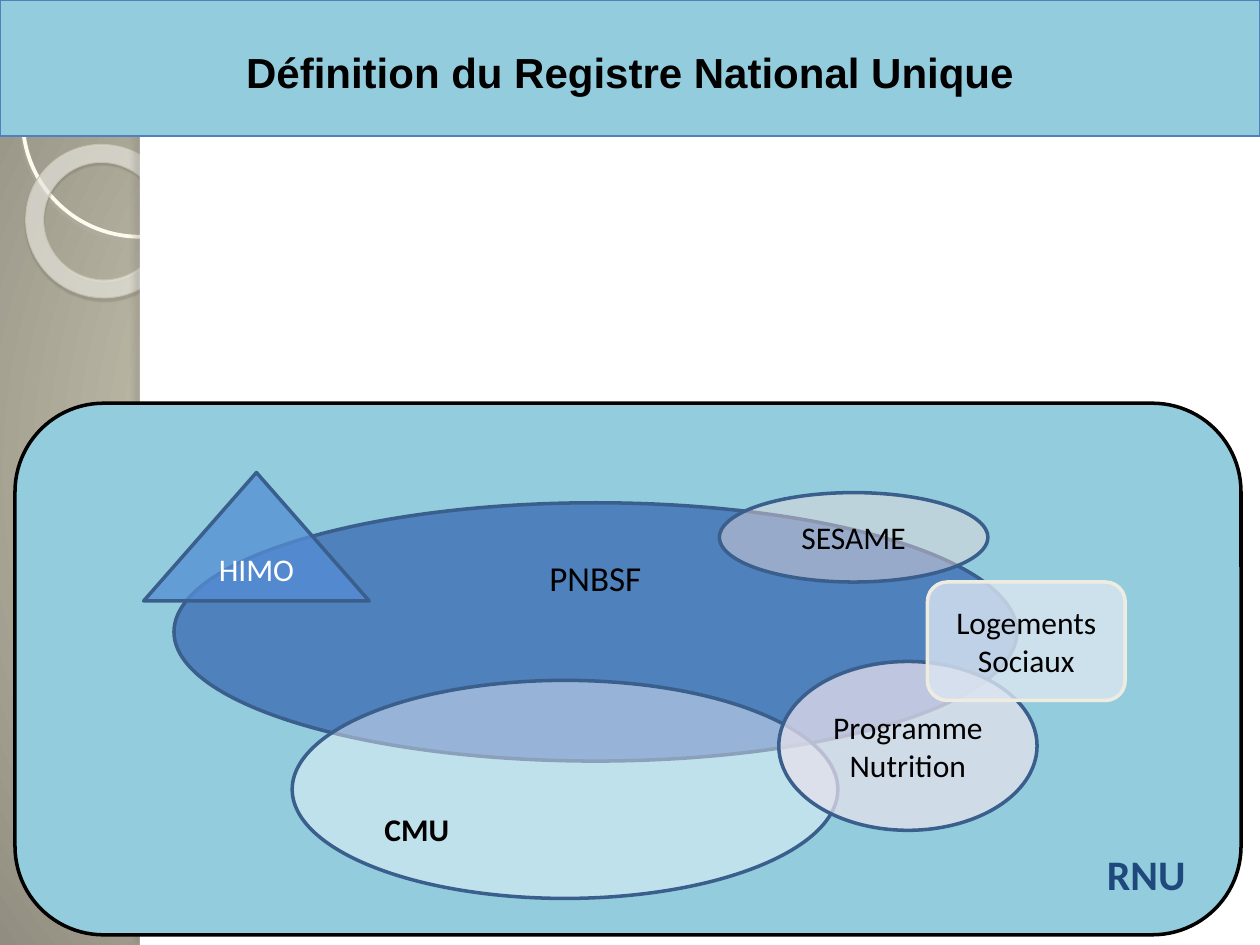
import dataclasses
import typing

import pptx
import pptx.dml.color
import pptx.enum.shapes
import pptx.enum.text
import pptx.oxml
import pptx.oxml.ns
import pptx.util

Pt = pptx.util.Pt
Kind = pptx.enum.shapes.MSO_SHAPE
Align = pptx.enum.text.PP_ALIGN
NS = 'xmlns:a="http://schemas.openxmlformats.org/drawingml/2006/main"'
BLUE, EDGE, BLACK = "93CDDD", "3A5F8C", "000000"


@dataclasses.dataclass
class Item:
    kind: typing.Any
    box: tuple
    fill: typing.Optional[str] = None
    alpha: int = 100
    line: typing.Optional[str] = EDGE
    width: float = 2
    text: str = ""
    font: dict = dataclasses.field(default_factory=dict)
    align: typing.Any = Align.CENTER
    inset: dict = dataclasses.field(default_factory=dict)
    turn: float = 0
    adjust: typing.Optional[float] = None
    shadow: typing.Optional[tuple] = None  # colour, alpha, blur, distance, angle


def tint(code: str) -> pptx.dml.color.RGBColor:
    return pptx.dml.color.RGBColor.from_string(code)


def paint(shape, item: Item) -> None:
    if item.fill:
        shape.fill.solid()
        shape.fill.fore_color.rgb = tint(item.fill)
        if item.alpha < 100:
            color = shape._element.spPr.find(".//" + pptx.oxml.ns.qn("a:srgbClr"))
            color.append(pptx.oxml.parse_xml(f'<a:alpha {NS} val="{item.alpha * 1000}"/>'))
    else:
        shape.fill.background()
    if item.line:
        shape.line.color.rgb = tint(item.line)
        shape.line.width = Pt(item.width)
    else:
        shape.line.fill.background()


def cast(shape, shadow: tuple) -> None:
    """Give the shape an outer shadow."""
    code, alpha, blur, dist, angle = shadow
    effects = shape._element.spPr.find(pptx.oxml.ns.qn("a:effectLst"))
    effects.append(pptx.oxml.parse_xml(
        f'<a:outerShdw {NS} blurRad="{Pt(blur)}" dist="{Pt(dist)}" '
        f'dir="{angle * 60000}" algn="tl" rotWithShape="0"><a:srgbClr val="{code}">'
        f'<a:alpha val="{alpha * 1000}"/></a:srgbClr></a:outerShdw>'))


def write(shape, item: Item) -> None:
    frame = shape.text_frame
    frame.text = item.text
    look = {"word_wrap": True, "auto_size": pptx.enum.text.MSO_AUTO_SIZE.NONE,
            "vertical_anchor": pptx.enum.text.MSO_ANCHOR.MIDDLE}
    look.update({f"margin_{side}": Pt(gap) for side, gap in item.inset.items()})
    for name, value in look.items():
        setattr(frame, name, value)
    line = frame.paragraphs[0]
    line.alignment = item.align
    style = {"name": "Calibri", "size": 18, "bold": False, "color": BLACK} | item.font
    font = line.runs[0].font
    font.color.rgb = tint(style.pop("color"))
    style["size"] = Pt(style["size"])
    for name, value in style.items():
        setattr(font, name, value)


def draw(slide, item: Item) -> None:
    shape = slide.shapes.add_shape(item.kind, *map(Pt, item.box))
    shape.shadow.inherit = False
    shape.rotation = item.turn
    if item.adjust is not None:
        shape.adjustments[0] = item.adjust
    paint(shape, item)
    if item.shadow:
        cast(shape, item.shadow)
    if item.text:
        write(shape, item)


def back(slide) -> None:
    """Fill the background with a round gradient."""
    fill = slide.background.fill
    fill.gradient()
    for stop, code, place in zip(fill.gradient_stops, ("FCF7DD", "918E81"), (0, 1)):
        stop.color.rgb = tint(code)
        stop.position = place
    grad = slide._element.find(".//" + pptx.oxml.ns.qn("a:gradFill"))
    old = grad.find(pptx.oxml.ns.qn("a:lin"))
    grad.replace(old, pptx.oxml.parse_xml(
        f'<a:path {NS} path="circle"><a:fillToRect l="50000" t="50000" '
        'r="50000" b="50000"/></a:path>'))


def head(slide) -> None:
    item = Item(None, (0, 0, 720, 77.8), BLUE, line="4F81BD", width=0.75,
                text="Définition du Registre National Unique",
                font={"name": "Arial", "size": 24, "bold": True},
                inset={"left": 0, "top": 3.6, "right": 0, "bottom": 0})
    title = slide.shapes.title
    for name, value in zip(("left", "top", "width", "height"), item.box):
        setattr(title, name, Pt(value))
    paint(title, item)
    write(title, item)
    slide.shapes._spTree.append(title._element)  # in front of the rings


ITEMS = [
    Item(Kind.OVAL, (13, 1.4, 133.9, 133.9), line="FEFBEC", width=2.15,
         shadow=("B2B0A4", 85, 2, 2, 90)),
    Item(Kind.DONUT, (14.4, 82.8, 88.6, 87.1), "FAF8F0", 60, "C5C1AE", 0.58,
         turn=38.6, adjust=0.118, shadow=("5A5850", 35, 1, 1.2, 75)),
    Item(Kind.RECTANGLE, (80, 0, 640, 540), "FFFFFF", line=None,
         shadow=("77756F", 25, 3, 3, 180)),
    Item(Kind.ROUNDED_RECTANGLE, (8.6, 230.4, 700.6, 303.8), BLUE, line=BLACK),
    Item(Kind.ROUNDED_RECTANGLE, (615, 479.5, 80, 39.6), BLUE, line=BLUE, text="RNU",
         font={"size": 24, "bold": True, "color": "1F497D"}),
    Item(Kind.OVAL, (99.4, 287.3, 481.7, 147.6), "4F81BD", text="PNBSF",
         font={"size": 20}, inset={"bottom": 66}),
    Item(Kind.OVAL, (167, 388.8, 311.8, 124.6), "FFFFFF", 41, text="CMU",
         font={"bold": True}, align=Align.LEFT, inset={"top": 49}),
    Item(Kind.OVAL, (445, 378, 147.6, 96.5), "E6E0EC", 74, text="Programme Nutrition"),
    Item(Kind.OVAL, (411.1, 281.5, 153.4, 51.1), "F2DCDB", 45, text="SESAME"),
    Item(Kind.ISOSCELES_TRIANGLE, (82.1, 270, 128.9, 73.4), "558ED5", 76,
         text="HIMO", font={"color": "FFFFFF"}),
    Item(Kind.FLOWCHART_ALTERNATE_PROCESS, (530, 332.6, 113, 67.7), "DCE6F2", 80,
         "EEECE1", text="Logements Sociaux"),
]


def main() -> None:
    deck = pptx.Presentation()
    deck.slide_width, deck.slide_height = Pt(720), Pt(540)
    slide = deck.slides.add_slide(deck.slide_layouts[5])
    back(slide)
    for item in ITEMS:
        draw(slide, item)
    head(slide)
    deck.save("out.pptx")


if __name__ == "__main__":
    main()
